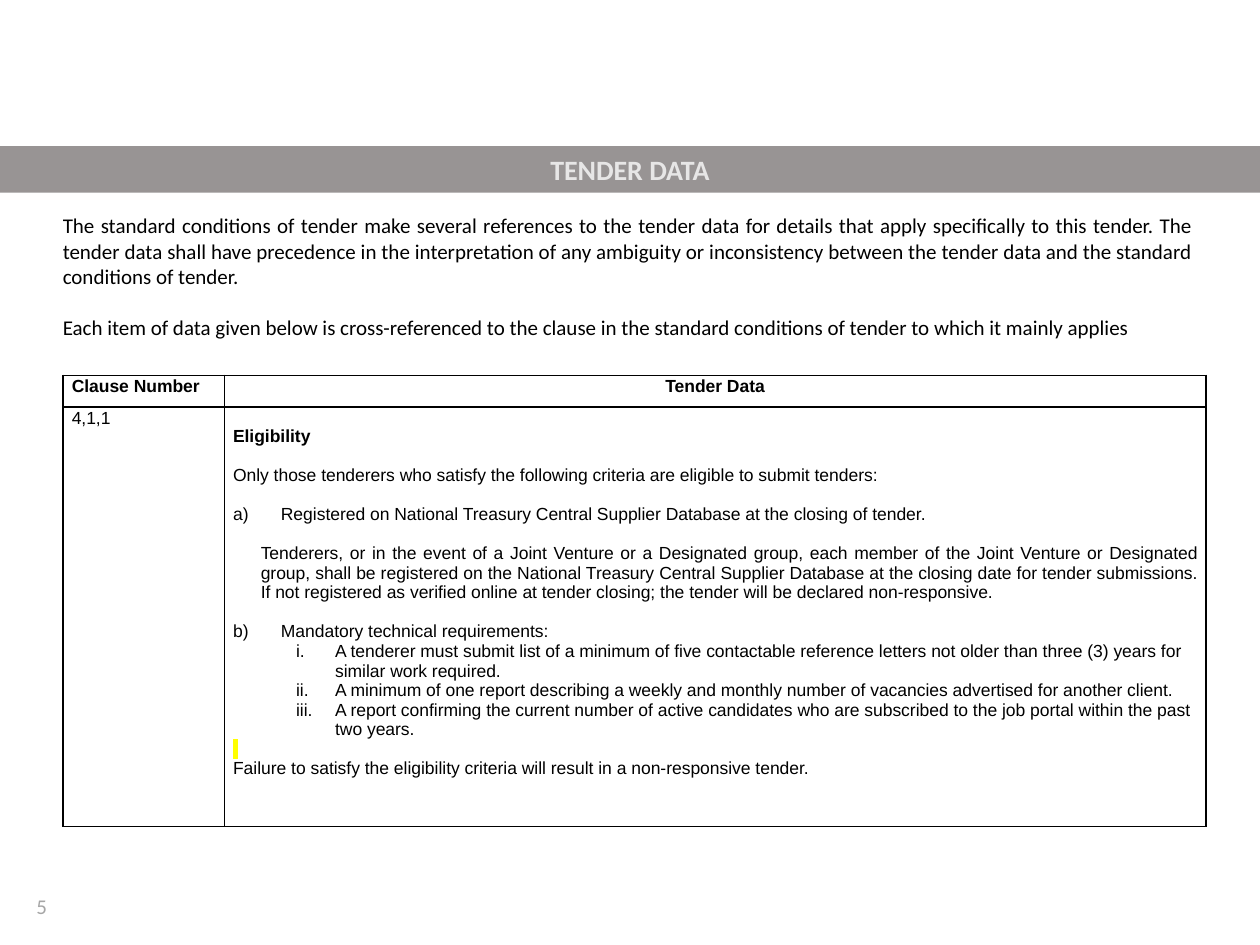
from lxml import etree
from pptx import Presentation
from pptx.dml.color import RGBColor
from pptx.enum.shapes import MSO_SHAPE as Shape
from pptx.enum.text import MSO_ANCHOR as Anchor, PP_ALIGN as Align
from pptx.oxml.ns import qn
from pptx.util import Inches, Pt

COLORS = {
    "bar": "989494",
    "bar_text": "E7E6E6",
    "page_number": "A6A6A6",
    "text": "000000",
    "highlight": "FFFF00",
}
BODY_FONT, TABLE_FONT = "Calibri", "Arial"
BODY_GAP, TABLE_GAP = 14.65, 11.2  # one line of text, in points

INTRO = [
    "The standard conditions of tender make several references to the tender data for "
    "details that apply specifically to this tender. The tender data shall have precedence "
    "in the interpretation of any ambiguity or inconsistency between the tender data and "
    "the standard conditions of tender.",
    "Each item of data given below is cross-referenced to the clause in the standard "
    "conditions of tender to which it mainly applies",
]

# Kind of paragraph, text
ELIGIBILITY = [
    ("heading", "Eligibility"),
    ("plain", "Only those tenderers who satisfy the following criteria are eligible "
              "to submit tenders:"),
    ("letter", "Registered on National Treasury Central Supplier Database at the closing "
               "of tender."),
    ("indented", "Tenderers, or in the event of a Joint Venture or a Designated group, each "
                 "member of the Joint Venture or Designated group, shall be registered on the "
                 "National Treasury Central Supplier Database at the closing date for tender "
                 "submissions. If not registered as verified online at tender closing; the "
                 "tender will be declared non-responsive."),
    ("letter", "Mandatory technical requirements:"),
    ("roman", "A tenderer must submit list of a minimum of five contactable reference "
              "letters not older than three (3) years for similar work required."),
    ("roman", "A minimum of one report describing a weekly and monthly number of vacancies "
              "advertised for another client."),
    ("roman", "A report confirming the current number of active candidates who are "
              "subscribed to the job portal within the past two years."),
    ("marked", " "),
    ("closing", "Failure to satisfy the eligibility criteria will result in a "
                "non-responsive tender."),
]
INDENTS = {"letter": (0.38, -0.38), "indented": (0.22, 0), "roman": (0.81, -0.31)}
NUMBERING = {"letter": "alphaLcParenR", "roman": "romanLcPeriod"}
NO_GAP = ("roman", "marked", "closing")


def color(name):
    return RGBColor.from_string(COLORS[name])


def format_paragraph(paragraph, font, size, color_name, align=Align.JUSTIFY, bold=False):
    paragraph.alignment = align
    for run in paragraph.runs:
        run.font.name = font
        run.font.size = Pt(size)
        run.font.bold = bold
        run.font.color.rgb = color(color_name)


def add_paragraph(text_frame, index, text):
    paragraph = text_frame.add_paragraph() if index else text_frame.paragraphs[0]
    paragraph.text = text
    return paragraph


def add_text(slide, box, paragraphs, color_name, align):
    text_box = slide.shapes.add_textbox(*map(Inches, box))
    text_frame = text_box.text_frame
    text_frame.word_wrap = True
    for index, text in enumerate(paragraphs):
        paragraph = add_paragraph(text_frame, index, text)
        if index:
            paragraph.space_before = Pt(BODY_GAP)
        format_paragraph(paragraph, BODY_FONT, 12, color_name, align)


def add_title_bar(slide, text):
    bar = slide.shapes.add_shape(Shape.RECTANGLE, 0, Inches(1.16), Inches(10), Inches(0.37))
    bar.shadow.inherit = False
    bar.fill.solid()
    bar.fill.fore_color.rgb = color("bar")
    bar.line.fill.background()
    bar.text_frame.text = text
    bar.text_frame.vertical_anchor = Anchor.MIDDLE
    format_paragraph(bar.text_frame.paragraphs[0], BODY_FONT, 16, "bar_text",
                     Align.CENTER, bold=True)


def set_list_style(paragraph, kind, start):
    """Set the indent and, for list items, the automatic number."""
    properties = paragraph._p.get_or_add_pPr()
    left, first_line = INDENTS.get(kind, (0, 0))
    properties.set("marL", str(Inches(left)))
    properties.set("indent", str(Inches(first_line)))
    if kind in NUMBERING:
        number = etree.SubElement(properties, qn("a:buAutoNum"), type=NUMBERING[kind])
        if start > 1:
            number.set("startAt", str(start))


def highlight(run):
    mark = etree.Element(qn("a:highlight"))
    etree.SubElement(mark, qn("a:srgbClr"), val=COLORS["highlight"])
    run._r.get_or_add_rPr().find(qn("a:solidFill")).addnext(mark)


def style_cell(cell):
    cell.margin_left = cell.margin_right = Inches(0.07)
    cell.margin_top = cell.margin_bottom = 0
    cell.vertical_anchor = Anchor.TOP
    properties = cell._tc.get_or_add_tcPr()
    for side in ("lnL", "lnR", "lnT", "lnB"):
        border = etree.SubElement(properties, qn(f"a:{side}"), w=str(Pt(1)))
        fill = etree.SubElement(border, qn("a:solidFill"))
        etree.SubElement(fill, qn("a:srgbClr"), val=COLORS["text"])
    cell.fill.background()


def fill_short_cell(cell, text, align, bold):
    cell.text_frame.text = text
    paragraph = cell.text_frame.paragraphs[0]
    paragraph.line_spacing = 1.07
    format_paragraph(paragraph, TABLE_FONT, 10, "text", align, bold)


def fill_eligibility(cell):
    cell.margin_top = Pt(TABLE_GAP)
    letters = 0
    for index, (kind, text) in enumerate(ELIGIBILITY):
        paragraph = add_paragraph(cell.text_frame, index, text)
        if index and kind not in NO_GAP:
            paragraph.space_before = Pt(TABLE_GAP)
        letters += kind == "letter"
        if kind == "roman":
            paragraph.level = 1
        set_list_style(paragraph, kind, letters if kind == "letter" else 1)
        align = Align.LEFT if kind == "roman" else Align.JUSTIFY
        format_paragraph(paragraph, TABLE_FONT, 10, "text", align, kind == "heading")
        if kind == "marked":
            highlight(paragraph.runs[0])


def add_tender_table(slide):
    widths, heights = (1.28, 7.79), (0.25, 3.33)
    box = (0.5, 2.98, sum(widths), sum(heights))
    table = slide.shapes.add_table(2, 2, *map(Inches, box)).table
    table.first_row = table.horz_banding = False
    for column, width in zip(table.columns, widths):
        column.width = Inches(width)
    for row, height in zip(table.rows, heights):
        row.height = Inches(height)
    for cell in table.iter_cells():
        style_cell(cell)
    fill_short_cell(table.cell(0, 0), "Clause Number", Align.JUSTIFY, True)
    fill_short_cell(table.cell(0, 1), "Tender Data", Align.CENTER, True)
    fill_short_cell(table.cell(1, 0), "4,1,1", Align.JUSTIFY, False)
    fill_eligibility(table.cell(1, 1))


def main():
    presentation = Presentation()
    presentation.slide_width, presentation.slide_height = Inches(10), Inches(7.5)
    slide = presentation.slides.add_slide(presentation.slide_layouts[6])
    add_text(slide, (0.19, 7.04, 2.25, 0.4), ["5"], "page_number", Align.LEFT)
    add_title_bar(slide, "TENDER DATA")
    add_text(slide, (0.4, 1.64, 9.17, 1.11), INTRO, "text", Align.JUSTIFY)
    add_tender_table(slide)
    presentation.save("out.pptx")


if __name__ == "__main__":
    main()
